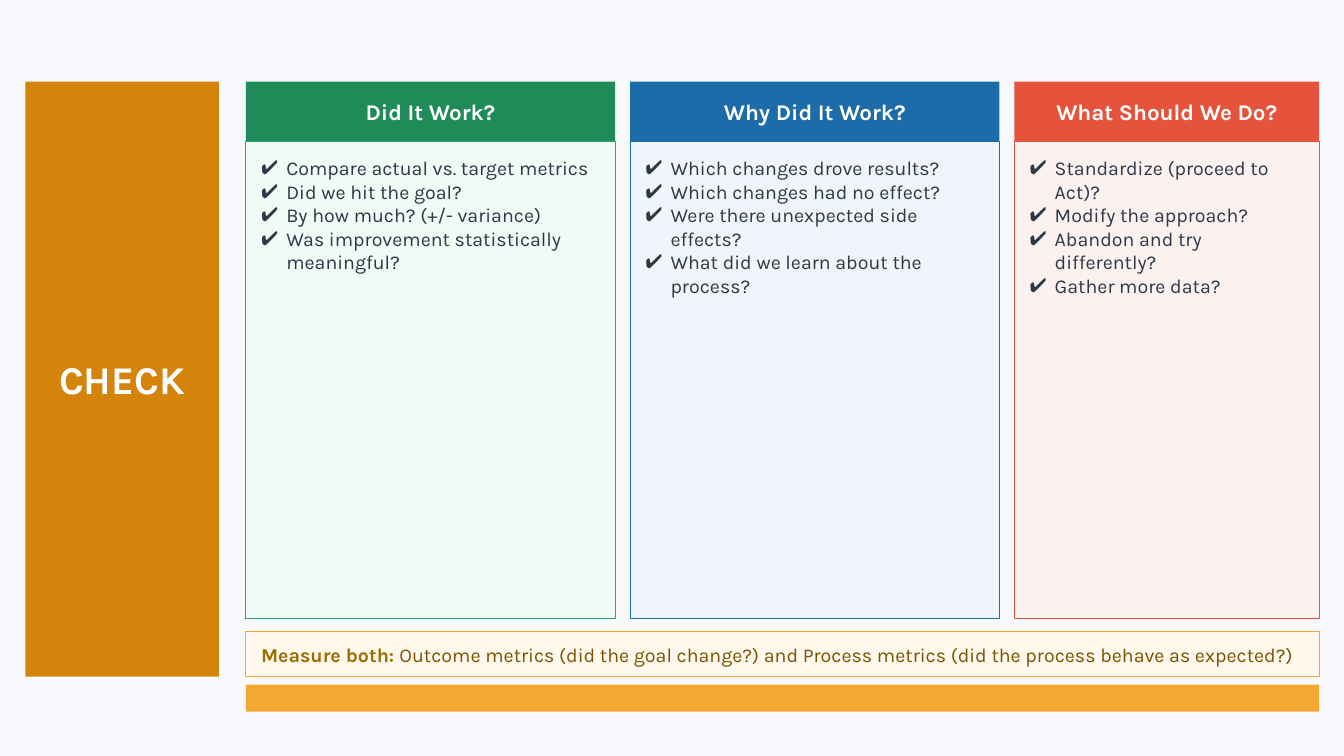
from lxml import etree
from pptx import Presentation
from pptx.dml.color import RGBColor
from pptx.enum.shapes import MSO_SHAPE
from pptx.enum.text import MSO_ANCHOR, MSO_AUTO_SIZE, PP_ALIGN
from pptx.oxml.ns import qn
from pptx.util import Inches, Pt

RECTANGLE = MSO_SHAPE.RECTANGLE
TOP, MIDDLE = MSO_ANCHOR.TOP, MSO_ANCHOR.MIDDLE
LEFT, CENTER = PP_ALIGN.LEFT, PP_ALIGN.CENTER
NO_FIT = MSO_AUTO_SIZE.NONE

COMPARISON_LAYOUT = 4
FONT = "Karla"
WHITE, INK, AMBER = "FFFFFF", "2D3748", "F4A832"

# Layout grid, in percent of the slide's width (x) and height (y)
RAIL_X, RAIL_W = 1.88, 14.4
CONTENT_X, CONTENT_RIGHT, GUTTER = 18.3, 98.15, 1.12
WIDE_COLUMN = 27.47
TOP_Y, HEADER_H, PANEL_H = 10.8, 7.85, 63.1
NOTE_Y, NOTE_H = 83.6, 5.9
BAR_Y, BAR_H = 90.55, 3.6

# Heading, checks, header colour, panel colour, border colour
COLUMNS = [
    ("Did It Work?",
     ["Compare actual vs. target metrics", "Did we hit the goal?",
      "By how much? (+/- variance)",
      "Was improvement statistically meaningful?"],
     "1E8B58", "F0FBF5", "27A96C"),
    ("Why Did It Work?",
     ["Which changes drove results?", "Which changes had no effect?",
      "Were there unexpected side effects?",
      "What did we learn about the process?"],
     "1B6CA8", "F0F5FB", "1B6CA8"),
    ("What Should We Do?",
     ["Standardize (proceed to Act)?", "Modify the approach?",
      "Abandon and try differently?", "Gather more data?"],
     "E5533D", "FBF2F0", "E5533D"),
]


def rgb(value):
    return RGBColor.from_string(value)


class CheckSlide:
    def __init__(self, deck, background):
        self.width, self.height = deck.slide_width, deck.slide_height
        self.slide = deck.slides.add_slide(deck.slide_layouts[COMPARISON_LAYOUT])
        self.slide.background.fill.solid()
        self.slide.background.fill.fore_color.rgb = rgb(background)
        self.title = self.slide.shapes.title
        self.bodies = [holder for holder in self.slide.placeholders
                       if holder.placeholder_format.idx > 0]

    def box(self, area, fill, border=None, holder=None):
        """Filled rectangle, built on a placeholder when one is given."""
        x, y, w, h = area
        place = (round(self.width * x / 100), round(self.height * y / 100),
                 round(self.width * w / 100), round(self.height * h / 100))
        if holder is None:
            holder = self.slide.shapes.add_shape(RECTANGLE, *place)
            holder.shadow.inherit = False
        else:
            holder.left, holder.top, holder.width, holder.height = place
        holder.fill.solid()
        holder.fill.fore_color.rgb = rgb(fill)
        if border:
            holder.line.color.rgb = rgb(border)
            holder.line.width = Pt(0.72)
        else:
            holder.line.fill.background()
        return holder

    def label(self, box, lines, size, color, bold=False, align=LEFT,
              anchor=MIDDLE, inset=(0, 0), bullet=None):
        frame = box.text_frame
        frame.text = "\n".join(lines)
        frame.word_wrap = True
        frame.auto_size = NO_FIT
        frame.vertical_anchor = anchor
        frame.margin_left = frame.margin_right = Inches(inset[0])
        frame.margin_top = frame.margin_bottom = Inches(inset[1])
        for paragraph in frame.paragraphs:
            paragraph.alignment = align
            paragraph.line_spacing = 1.0
            paragraph.space_before = paragraph.space_after = Pt(0)
            self.mark(paragraph, bullet)
            for run in paragraph.runs:
                self.style(run, size, color, bold)

    def mark(self, paragraph, bullet):
        """Hanging bullet, or none at all."""
        props = paragraph._p.get_or_add_pPr()
        indent = Inches(0.25) if bullet else 0
        props.set("marL", str(indent))
        props.set("indent", str(-indent))
        if bullet:
            etree.SubElement(props, qn("a:buFont"), typeface="Arial")
            etree.SubElement(props, qn("a:buChar"), char=bullet)
        else:
            etree.SubElement(props, qn("a:buNone"))

    def style(self, run, size, color, bold):
        run.font.name = FONT
        run.font.size = Pt(size)
        run.font.bold = bold
        run.font.color.rgb = rgb(color)

    def rail(self, phase, area, fill):
        """Rounded slide title that reads upwards."""
        rail = self.box(area, fill, holder=self.title)
        outline = etree.Element(qn("a:prstGeom"), prst="roundRect")
        guides = etree.SubElement(outline, qn("a:avLst"))
        etree.SubElement(guides, qn("a:gd"), name="adj", fmla="val 10000")
        rail._element.spPr.find(qn("a:xfrm")).addnext(outline)
        self.label(rail, [phase], 28, WHITE, bold=True, align=CENTER)
        rail.text_frame._txBody.bodyPr.set("vert", "vert270")

    def column(self, x, width, content, holders):
        heading, checks, header_fill, panel_fill, border = content
        header = self.box((x, TOP_Y, width, HEADER_H), header_fill,
                          holder=holders[0])
        self.label(header, [heading], 16, WHITE, bold=True, align=CENTER,
                   inset=(0.1, 0))
        panel = self.box((x, TOP_Y + HEADER_H, width, PANEL_H), panel_fill,
                         border, holders[1])
        self.label(panel, checks, 14, INK, anchor=TOP, inset=(0.15, 0.15),
                   bullet="✔")

    def note(self, lead, message, area):
        note = self.box(area, "FFF8EC", AMBER)
        self.label(note, [lead], 14, "9D6C00", bold=True, inset=(0.15, 0))
        rest = note.text_frame.paragraphs[0].add_run()
        rest.text = message
        self.style(rest, 14, "7A5200", False)


def main():
    deck = Presentation()
    deck.slide_width, deck.slide_height = Inches(13.33), Inches(7.5)
    check = CheckSlide(deck, "F7F9FC")

    # Phase rail, as tall as the columns and the note together
    check.rail("CHECK", (RAIL_X, TOP_Y, RAIL_W, NOTE_Y + NOTE_H - TOP_Y), "D4840A")

    # Question columns: the layout serves two, the last fills what is left
    holders = check.bodies + [None, None]
    for number, content in enumerate(COLUMNS):
        x = CONTENT_X + number * (WIDE_COLUMN + GUTTER)
        width = min(WIDE_COLUMN, CONTENT_RIGHT - x)
        check.column(x, width, content, holders[2 * number:2 * number + 2])

    # Measurement note and closing bar
    content_w = CONTENT_RIGHT - CONTENT_X
    check.note("Measure both: ",
               "Outcome metrics (did the goal change?) and Process metrics "
               "(did the process behave as expected?)",
               (CONTENT_X, NOTE_Y, content_w, NOTE_H))
    check.box((CONTENT_X, BAR_Y, content_w, BAR_H), AMBER)

    deck.save("out.pptx")


if __name__ == "__main__":
    main()
